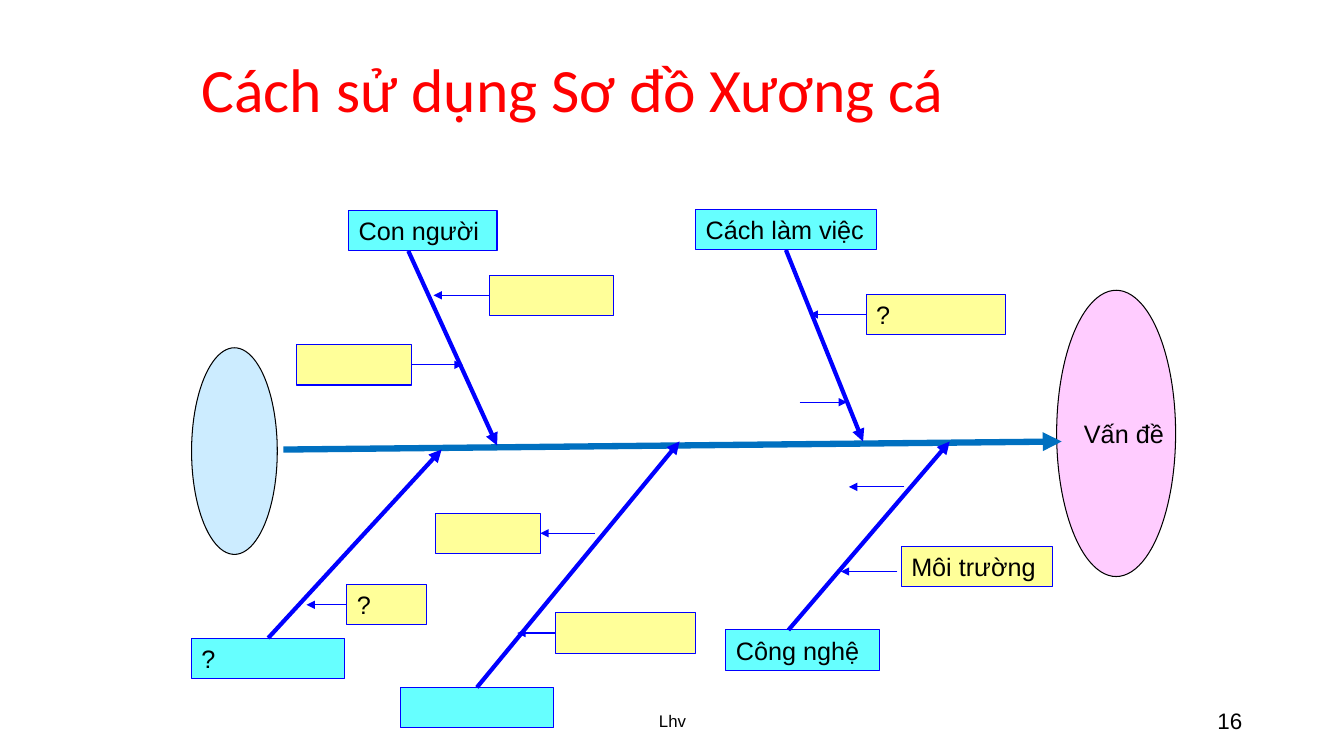
from lxml.etree import SubElement
from pptx import Presentation
from pptx.dml.color import RGBColor
from pptx.enum.shapes import MSO_CONNECTOR as CONN, MSO_SHAPE as SHAPE
from pptx.enum.text import MSO_ANCHOR as ANCHOR, MSO_AUTO_SIZE as AUTO, PP_ALIGN as ALIGN
from pptx.oxml.ns import qn
from pptx.util import Inches, Pt

BLACK = RGBColor(0x00, 0x00, 0x00)
RED = RGBColor(0xFF, 0x00, 0x00)
BLUE = RGBColor(0x00, 0x00, 0xFF)
SPINE_BLUE = RGBColor(0x00, 0x70, 0xC0)
CYAN = RGBColor(0x66, 0xFF, 0xFF)
YELLOW = RGBColor(0xFF, 0xFF, 0x99)
PINK = RGBColor(0xFF, 0xCC, 0xFF)
PALE_BLUE = RGBColor(0xCC, 0xEC, 0xFF)

TOP, LEFT, BOTTOM, RIGHT = range(4)
BOX_H = 0.4
THIN = 0.75
BONE = 3

CAUSES = [
    ("Con người", 1.56, 0.01, 1.47, None, (2.15, 0.41), (3.03, 2.34)),
    ("Cách làm việc", 5, 0, 1.79, BOTTOM, (5.84, 0.42), (6.66, 2.3)),
    ("", 2.07, 4.74, 1.52, TOP, (2.8, 4.74), (4.84, 2.3)),
    ("?", 0, 4.25, 1.52, TOP, (0.77, 4.25), (2.48, 2.38)),
    ("Công nghệ", 5.3, 4.17, 1.52, None, (5.92, 4.17), (7.52, 2.3)),
]
DETAILS = [
    ("", 1.04, 1.34, 1.14, RIGHT, 2.69),
    ("", 2.96, 0.65, 1.23, LEFT, 2.4),
    ("?", 1.54, 3.72, 0.79, LEFT, 1.14),
    ("", 3.61, 4, 1.39, LEFT, 3.23),
    ("?", 6.69, 0.84, 1.38, LEFT, 6.13),
]
LOOSE_TWIGS = [(6.03, 6.5, 1.91), (7.07, 6.52, 2.75), (7, 6.44, 3.59)]


def write(tf, text, font, align=ALIGN.LEFT, anchor=ANCHOR.TOP, wrap=True):
    frame = {"word_wrap": wrap, "vertical_anchor": anchor}
    for name, value in frame.items():
        setattr(tf, name, value)
    p = tf.paragraphs[0]
    p.alignment = align
    r = p.add_run()
    r.text = text
    r.font.color.rgb = font["color"]
    for name in ("name", "size"):
        setattr(r.font, name, font[name])
    return p


def arial(size):
    return {"name": "Arial", "size": Pt(size), "color": BLACK}


def add_shape(s, kind, x, y, w, h, fill, line):
    sp = s.shapes.add_shape(kind, Inches(x), Inches(y), Inches(w), Inches(h))
    sp.shadow.inherit = False
    sp.fill.solid()
    sp.fill.fore_color.rgb = fill
    sp.line.color.rgb = line
    sp.line.width = Pt(THIN)
    return sp


def add_box(s, x, y, w, fill, text):
    sp = add_shape(s, SHAPE.RECTANGLE, x, y, w, BOX_H, fill, BLUE)
    if text:
        write(sp.text_frame, text, arial(18), wrap=text not in ("Con người", "Cách làm việc"))
        sp.text_frame.auto_size = AUTO.SHAPE_TO_FIT_TEXT
    return sp


def add_arrow(s, x1, y1, x2, y2, width, color=BLUE):
    c = s.shapes.add_connector(CONN.STRAIGHT, Inches(x1), Inches(y1), Inches(x2), Inches(y2))
    c.line.color.rgb = color
    c.line.width = Pt(width)
    SubElement(c.line._get_or_add_ln(), qn("a:tailEnd"), type="triangle")
    SubElement(c._element.spPr, qn("a:effectLst"))
    return c


def add_title(s, x, y, w, h):
    sp = s.shapes.title
    place = {"left": x, "top": y, "width": w, "height": h}
    for name, value in place.items():
        setattr(sp, name, Inches(value))
    font = {"name": "Calibri", "size": Pt(44), "color": RED}
    p = write(sp.text_frame, "Cách sử dụng Sơ đồ Xương cá", font, anchor=ANCHOR.MIDDLE)
    p.line_spacing = 0.9


def add_footer(s, x, y, w, h, text, size, align):
    sp = s.shapes.add_textbox(Inches(x), Inches(y), Inches(w), Inches(h))
    write(sp.text_frame, text, arial(size), align, ANCHOR.MIDDLE)


def add_spine(s, x, y):
    add_shape(s, SHAPE.OVAL, x, y + 1.37, 0.85, 2.05, PALE_BLUE, BLACK)
    head = add_shape(s, SHAPE.OVAL, x + 8.58, y + 0.8, 1.18, 2.84, PINK, BLACK)
    write(head.text_frame, "Vấn đề", arial(18), anchor=ANCHOR.MIDDLE, wrap=False)
    add_arrow(s, x + 0.91, y + 2.38, x + 8.63, y + 2.3, 4.5, SPINE_BLUE)


def add_causes(s, x, y):
    for text, bx, by, w, side, (rx, ry), (tx, ty) in CAUSES:
        sp = add_box(s, x + bx, y + by, w, CYAN, text)
        bone = add_arrow(s, x + rx, y + ry, x + tx, y + ty, BONE)
        if side is not None:
            bone.begin_connect(sp, side)


def add_details(s, x, y):
    for text, bx, by, w, side, tip in DETAILS:
        sp = add_box(s, x + bx, y + by, w, YELLOW, text)
        mid = y + by + BOX_H / 2
        start = x + bx + (w if side == RIGHT else 0)
        add_arrow(s, start, mid, x + tip, mid, THIN).begin_connect(sp, side)

    target = add_box(s, x + 2.42, y + 3.01, 1.04, YELLOW, "")
    mid = y + 3.01 + BOX_H / 2
    add_arrow(s, x + 4, mid, x + 3.46, mid, THIN).end_connect(target, RIGHT)

    add_box(s, x + 7.04, y + 3.34, 1.5, YELLOW, "Môi trường")
    for start, tip, ty in LOOSE_TWIGS:
        add_arrow(s, x + start, y + ty, x + tip, y + ty, THIN)


def add_fishbone(s, x, y):
    add_spine(s, x, y)
    add_causes(s, x, y)
    add_details(s, x, y)


def main():
    prs = Presentation()
    prs.slide_width, prs.slide_height = Inches(13.33), Inches(7.5)
    s = prs.slides.add_slide(prs.slide_layouts[5])
    add_title(s, 1.9, 0.41, 8.96, 1.01)
    add_footer(s, 4.42, 6.95, 4.5, 0.4, "Lhv", 12, ALIGN.CENTER)
    add_footer(s, 9.42, 6.95, 3, 0.4, "16", 16, ALIGN.RIGHT)
    add_fishbone(s, 1.9, 2.08)
    prs.save("out.pptx")


if __name__ == "__main__":
    main()
